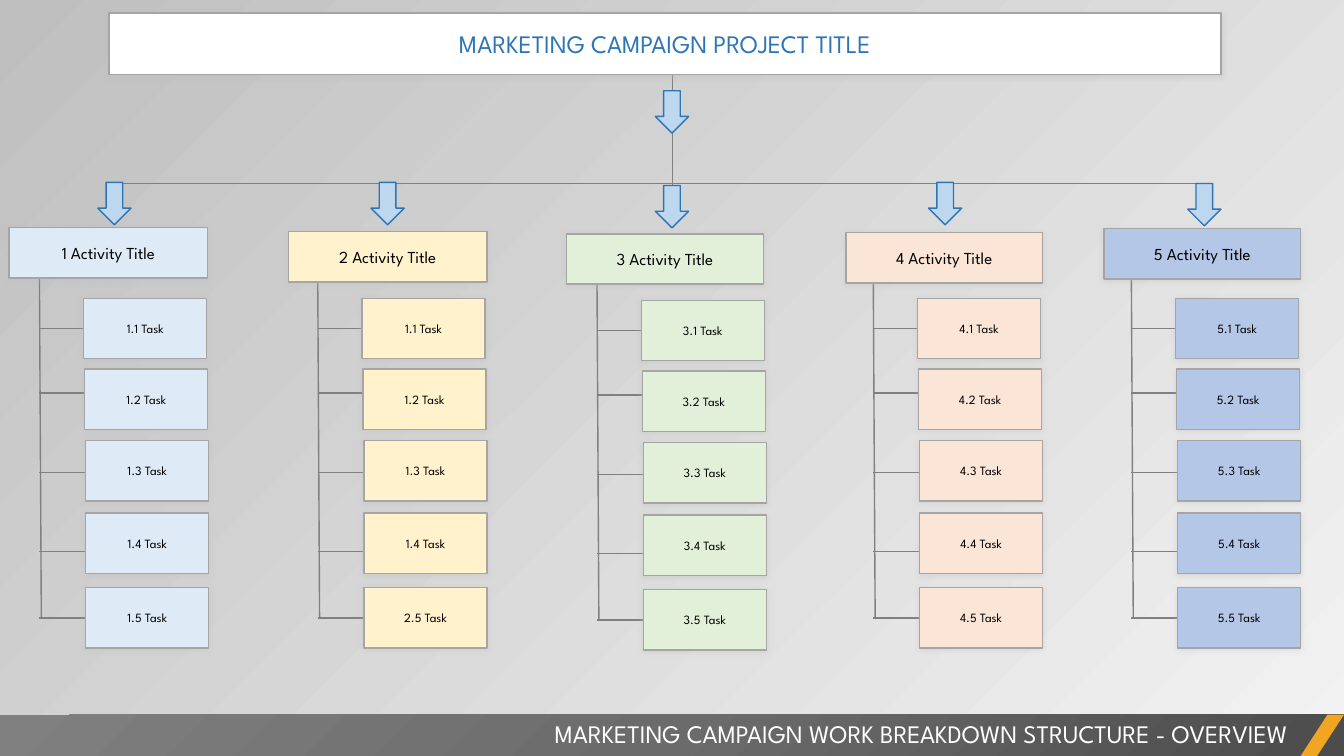
from dataclasses import dataclass

from lxml import etree
from pptx import Presentation
from pptx.dml.color import RGBColor
from pptx.enum.shapes import MSO_CONNECTOR, MSO_SHAPE
from pptx.enum.text import MSO_ANCHOR, MSO_AUTO_SIZE, PP_ALIGN
from pptx.oxml.ns import qn
from pptx.shapes.autoshape import Shape
from pptx.slide import Slide
from pptx.util import Inches, Pt

RECTANGLE = MSO_SHAPE.RECTANGLE
DOWN_ARROW = MSO_SHAPE.DOWN_ARROW
PARALLELOGRAM = MSO_SHAPE.PARALLELOGRAM
STRAIGHT = MSO_CONNECTOR.STRAIGHT
MIDDLE = MSO_ANCHOR.MIDDLE
GROW_TO_FIT = MSO_AUTO_SIZE.SHAPE_TO_FIT_TEXT
CENTER = PP_ALIGN.CENTER
RIGHT = PP_ALIGN.RIGHT


@dataclass(frozen=True)
class Theme:
    font: str = "League Spartan"
    title_size: int = 18
    activity_size: int = 12
    task_size: int = 9
    line_width: int = 1
    white: str = "FFFFFF"
    black: str = "000000"
    blue: str = "2E75B6"
    arrow: str = "BDD7EE"
    border: str = "A5A5A5"
    connector: str = "808080"
    shadow: str = "BFBFBF"
    accent: str = "F0A622"
    backdrop: tuple[str, str] = ("F2F2F2", "BFBFBF")
    footer: tuple[str, str, str] = ("4C4C4C", "6B6B6B", "808080")


@dataclass(frozen=True)
class Box:
    left: float
    top: float
    width: float
    height: float

    def lengths(self) -> list[Inches]:
        """Return the four measures as slide lengths."""
        return [Inches(v) for v in (self.left, self.top, self.width, self.height)]


@dataclass(frozen=True)
class Branch:
    activity: str
    heading: Box
    fill: str
    spine: float
    arrow_left: float
    arrow_top: float
    tasks: tuple[str, ...]
    drop: float = 0


@dataclass(frozen=True)
class TaskRow:
    top: float
    stub: float
    shift: float


THEME = Theme()
ROWS = (
    TaskRow(2.96, 3.26, 0.44),
    TaskRow(3.66, 3.9, 0.45),
    TaskRow(4.37, 4.69, 0.46),
    TaskRow(5.09, 5.47, 0.46),
    TaskRow(5.83, 6.13, 0.46),
)


def numbered(prefix: int) -> tuple[str, ...]:
    """Return the task labels of one activity."""
    return tuple(f"{prefix}.{number} Task" for number in range(1, len(ROWS) + 1))


BRANCHES = (
    Branch("1 Activity Title", Box(0.09, 2.26, 1.97, 0.5), "DEEBF7", 0.39, 0.97, 1.81, numbered(1)),
    Branch("2 Activity Title", Box(2.86, 2.3, 1.97, 0.5), "FFF2CC", 3.15, 3.68, 1.81,
           numbered(1)[:-1] + ("2.5 Task",)),
    Branch("3 Activity Title", Box(5.62, 2.32, 1.95, 0.5), "E2F0D9", 5.92, 6.5, 1.84,
           numbered(3), drop=0.02),
    Branch("4 Activity Title", Box(8.39, 2.31, 1.95, 0.5), "FBE5D6", 8.66, 9.21, 1.81, numbered(4)),
    Branch("5 Activity Title", Box(10.95, 2.27, 1.95, 0.5), "B4C7E7", 11.22, 11.78, 1.82, numbered(5)),
)


def write(shape: Shape, text: str, *, size: int, color: str = THEME.black,
          align: PP_ALIGN = CENTER) -> None:
    """Put one formatted paragraph into a shape."""
    frame = shape.text_frame
    frame.word_wrap = True
    paragraph = frame.paragraphs[0]
    paragraph.alignment = align
    run = paragraph.add_run()
    run.text = text
    run.font.name = THEME.font
    run.font.size = Pt(size)
    run.font.color.rgb = RGBColor.from_string(color)


def add_block(slide: Slide, kind: MSO_SHAPE, box: Box, fill: str, border: str = "") -> Shape:
    """Draw a flat preset shape."""
    block = slide.shapes.add_shape(kind, *box.lengths())
    block.shadow.inherit = False
    block.fill.solid()
    block.fill.fore_color.rgb = RGBColor.from_string(fill)
    if border:
        block.line.color.rgb = RGBColor.from_string(border)
        block.line.width = Pt(THEME.line_width)
    else:
        block.line.fill.background()
    return block


def add_card(slide: Slide, box: Box, text: str, fill: str, size: int,
             color: str = THEME.black) -> None:
    """Draw a bordered rectangle with a soft shadow and centred text."""
    card = add_block(slide, RECTANGLE, box, fill, THEME.border)
    effects = card._element.spPr.find(qn("a:effectLst"))
    shadow = etree.SubElement(effects, qn("a:outerShdw"), blurRad=str(Pt(4)),
                              dist=str(Pt(1)), dir="5400000", rotWithShape="0")
    tint = etree.SubElement(shadow, qn("a:srgbClr"), val=THEME.shadow)
    etree.SubElement(tint, qn("a:alpha"), val="40000")
    card.text_frame.vertical_anchor = MIDDLE
    write(card, text, size=size, color=color)


def add_line(slide: Slide, x1: float, y1: float, x2: float, y2: float) -> None:
    """Draw a thin grey connector."""
    line = slide.shapes.add_connector(STRAIGHT, Inches(x1), Inches(y1), Inches(x2), Inches(y2))
    line.line.color.rgb = RGBColor.from_string(THEME.connector)
    line.line.width = Pt(THEME.line_width)
    etree.SubElement(line._element.spPr, qn("a:effectLst"))


def add_arrow(slide: Slide, left: float, top: float) -> None:
    """Draw a block arrow pointing down."""
    add_block(slide, DOWN_ARROW, Box(left, top, 0.33, 0.42), THEME.arrow, THEME.blue)


def add_branch(slide: Slide, branch: Branch) -> None:
    """Draw an activity with its spine, stubs and tasks."""
    drop = branch.drop
    add_line(slide, branch.spine, 2.52 + drop, branch.spine + 0.02, ROWS[-1].stub + drop)
    for row, task in zip(ROWS, branch.tasks):
        stub = row.stub + drop
        add_line(slide, branch.spine, stub, branch.spine + 0.9, stub)
        add_card(slide, Box(branch.spine + row.shift, row.top + drop, 1.22, 0.6),
                 task, branch.fill, THEME.task_size)
    add_card(slide, branch.heading, branch.activity, branch.fill, THEME.activity_size)
    add_arrow(slide, branch.arrow_left, branch.arrow_top)


def paint_background(slide: Slide) -> None:
    """Fill the slide with a diagonal grey gradient."""
    fill = slide.background.fill
    fill.gradient()
    fill.gradient_angle = 135
    for stop, color in zip(fill.gradient_stops, THEME.backdrop):
        stop.color.rgb = RGBColor.from_string(color)
    lightest = slide._element.find(".//" + qn("a:srgbClr"))
    etree.SubElement(lightest, qn("a:alpha"), val="40000")


def add_footer(slide: Slide) -> None:
    """Draw the bottom band with its accent and caption."""
    band = add_block(slide, RECTANGLE, Box(0, 7.09, 13.33, 0.41), THEME.footer[0])
    solid = band._element.spPr.find(qn("a:solidFill"))
    gradient = etree.Element(qn("a:gradFill"), rotWithShape="1")
    stops = etree.SubElement(gradient, qn("a:gsLst"))
    for index, color in enumerate(THEME.footer):
        stop = etree.SubElement(stops, qn("a:gs"), pos=str(index * 50000))
        etree.SubElement(stop, qn("a:srgbClr"), val=color)
    focus = etree.SubElement(gradient, qn("a:path"), path="circle")
    etree.SubElement(focus, qn("a:fillToRect"), l="100000", t="100000")
    solid.getparent().replace(solid, gradient)
    accent = add_block(slide, PARALLELOGRAM, Box(12.9, 7.09, 0.43, 0.41), THEME.accent)
    accent.adjustments[0] = 0.65
    caption = slide.shapes.add_textbox(*Box(0.09, 7.08, 12.78, 0.4).lengths())
    caption.text_frame.auto_size = GROW_TO_FIT
    write(caption, "MARKETING CAMPAIGN WORK BREAKDOWN STRUCTURE - OVERVIEW",
          size=THEME.title_size, color=THEME.white, align=RIGHT)


def main() -> None:
    """Build the work breakdown slide and save it."""
    deck = Presentation()
    deck.slide_width, deck.slide_height = Inches(13.33), Inches(7.5)
    slide = deck.slides.add_slide(deck.slide_layouts[6])
    paint_background(slide)
    add_line(slide, 6.67, 0.59, 6.67, 1.84)
    add_card(slide, Box(1.08, 0.13, 11.03, 0.61), "MARKETING CAMPAIGN PROJECT TITLE",
             THEME.white, THEME.title_size, THEME.blue)
    add_line(slide, 1.08, 1.82, 11.95, 1.82)
    add_footer(slide)
    for branch in BRANCHES:
        add_branch(slide, branch)
    add_arrow(slide, 6.5, 0.9)
    deck.save("out.pptx")


if __name__ == "__main__":
    main()
